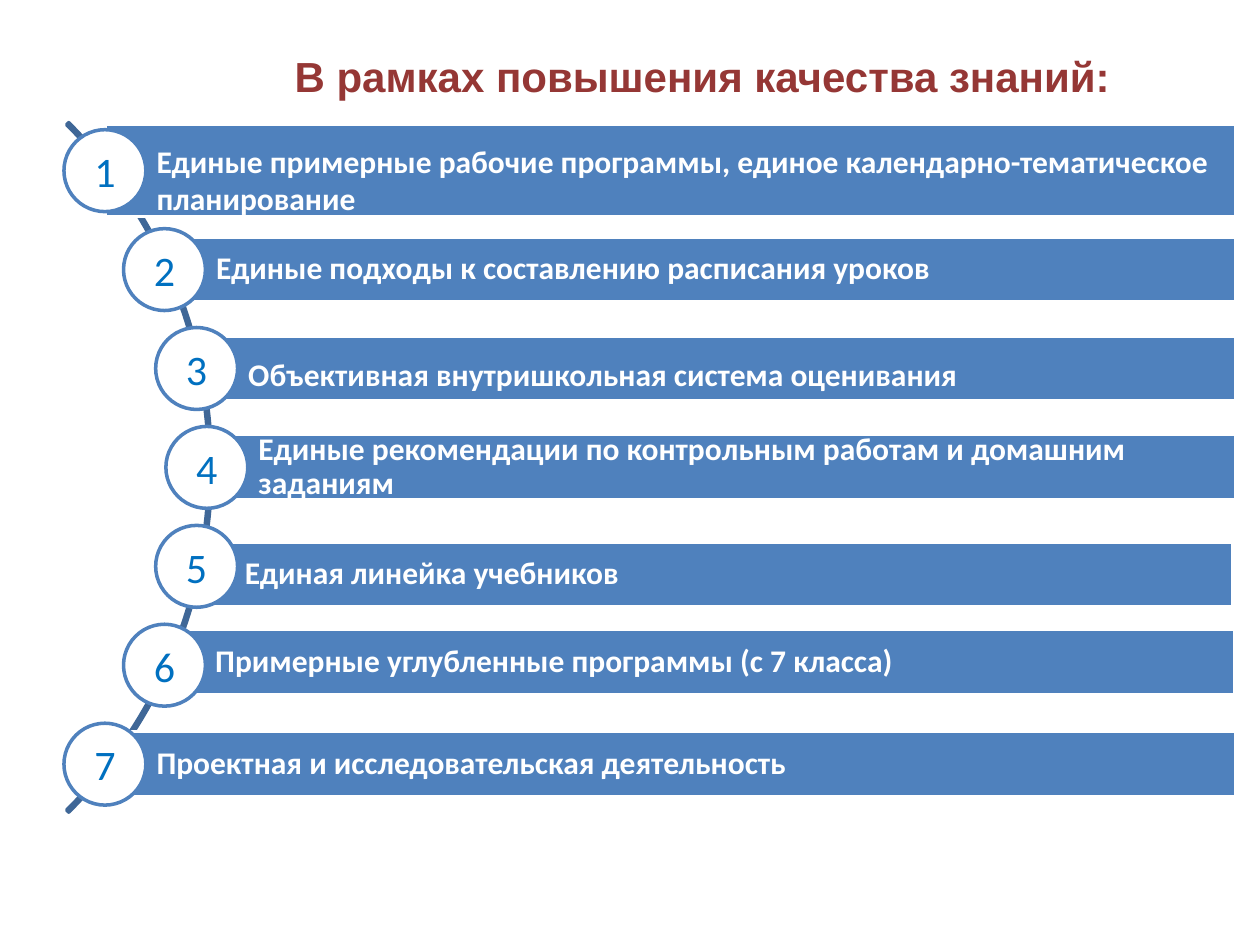
from math import sqrt

from lxml import etree
from pptx import Presentation
from pptx.dml.color import RGBColor
from pptx.enum.shapes import MSO_SHAPE
from pptx.enum.text import MSO_ANCHOR, PP_ALIGN
from pptx.util import Pt

COLORS = {
    "bar": "4F81BD",
    "arc": "3F6797",
    "number": "0070C0",
    "title": "953735",
    "white": "FFFFFF",
}
TITLE_FONT = {"name": "Arial", "size": Pt(24), "bold": True}
BAR_FONT = {"name": "Calibri", "size": Pt(18), "bold": True}
NUMBER_FONT = {"name": "Calibri", "size": Pt(24)}

ARC_RADIUS = 278.6
TRACK_RADIUS = 275.9  # circle centres sit just inside the arc
CIRCLE = 46.8
STEP = 56.52
TEXT_INDENT = 29.5

# text, height, horizontal and vertical bar offset, top and bottom inset, line spacing
DIRECTIONS = [
    ("Единые примерные рабочие программы, единое календарно-тематическое планирование",
     52.6, 0, 0, 10, 0, 1.0),
    ("Единые подходы к составлению расписания уроков", 37.4, 0, 0, 3.6, 3.6, 0.9),
    ("Объективная внутришкольная система оценивания", 37.4, 0, 0, 6, 0, 1.0),
    ("Единые рекомендации по контрольным работам и домашним заданиям",
     37.4, 0, 0, 3.6, 3.6, 0.9),
    ("Единая линейка учебников", 37.4, -2, 4.7, 3.6, 3.6, 0.9),
    ("Примерные углубленные программы (с 7 класса)", 37.4, -0.5, -1.7, 3.6, 3.6, 0.9),
    ("Проектная и исследовательская деятельность", 37.4, 0, 0, 3.6, 3.6, 0.9),
]


def rgb(key):
    return RGBColor.from_string(COLORS[key])


def set_attributes(target, values):
    for key, value in values.items():
        setattr(target, key, value)


def write(shape, text, font, color, insets, align=PP_ALIGN.LEFT,
          spacing=1.0, anchor=MSO_ANCHOR.MIDDLE):
    """Insets are left, top, right, bottom."""
    frame = shape.text_frame
    left, top, right, bottom = map(Pt, insets)
    set_attributes(frame, {
        "word_wrap": True, "vertical_anchor": anchor,
        "margin_left": left, "margin_top": top,
        "margin_right": right, "margin_bottom": bottom,
    })
    paragraph = frame.paragraphs[0]
    set_attributes(paragraph, {"alignment": align, "line_spacing": spacing})
    run = paragraph.add_run()
    run.text = text
    set_attributes(run.font, font)
    run.font.color.rgb = rgb(color)


def add_outlined(slide, preset, box, line, fill=None):
    shape = slide.shapes.add_shape(preset, *map(Pt, box))
    shape.shadow.inherit = False
    if fill:
        shape.fill.solid()
        shape.fill.fore_color.rgb = rgb(fill)
    else:
        shape.fill.background()
    shape.line.color.rgb = rgb(line)
    shape.line.width = Pt(2)
    return shape


def add_title(slide, box):
    title = slide.shapes.add_textbox(*map(Pt, box))
    write(title, "В рамках повышения качества знаний:", TITLE_FONT, "title",
          (7.2, 3.6, 7.2, 3.6), PP_ALIGN.JUSTIFY, 1.15, MSO_ANCHOR.TOP)


def add_directions(slide, center_x, center_y, right):
    """Numbered bars strung along an arc round the given centre."""
    arc = add_outlined(slide, MSO_SHAPE.BLOCK_ARC,
                       (center_x - ARC_RADIUS, center_y - ARC_RADIUS,
                        2 * ARC_RADIUS, 2 * ARC_RADIUS), "arc")
    for index, value in enumerate((189, 27, 0.003)):
        arc.adjustments[index] = value

    middle = (len(DIRECTIONS) - 1) / 2
    for index, direction in enumerate(DIRECTIONS):
        text, height, shift_x, shift_y, top, bottom, spacing = direction
        rise = (index - middle) * STEP
        x = center_x + sqrt(TRACK_RADIUS ** 2 - rise ** 2)
        y = center_y + rise
        bar = add_outlined(slide, MSO_SHAPE.RECTANGLE,
                           (x + shift_x, y + shift_y - height / 2, right - x, height),
                           "white", "bar")
        write(bar, text, BAR_FONT, "white", (TEXT_INDENT, top, 3.6, bottom),
              spacing=spacing)
        circle = add_outlined(slide, MSO_SHAPE.OVAL,
                              (x - CIRCLE / 2, y - CIRCLE / 2, CIRCLE, CIRCLE),
                              "bar", "white")
        write(circle, str(index + 1), NUMBER_FONT, "number", (0, 0, 0, 0),
              PP_ALIGN.CENTER)


def main():
    deck = Presentation()
    deck.slide_width, deck.slide_height = Pt(720), Pt(540)
    slide = deck.slides.add_slide(deck.slide_layouts[6])
    add_directions(slide, -157.7, 267.1, 706.3)
    add_title(slide, (161.3, 20.9, 499, 38.2))
    deck.save("out.pptx")


if __name__ == "__main__":
    main()
